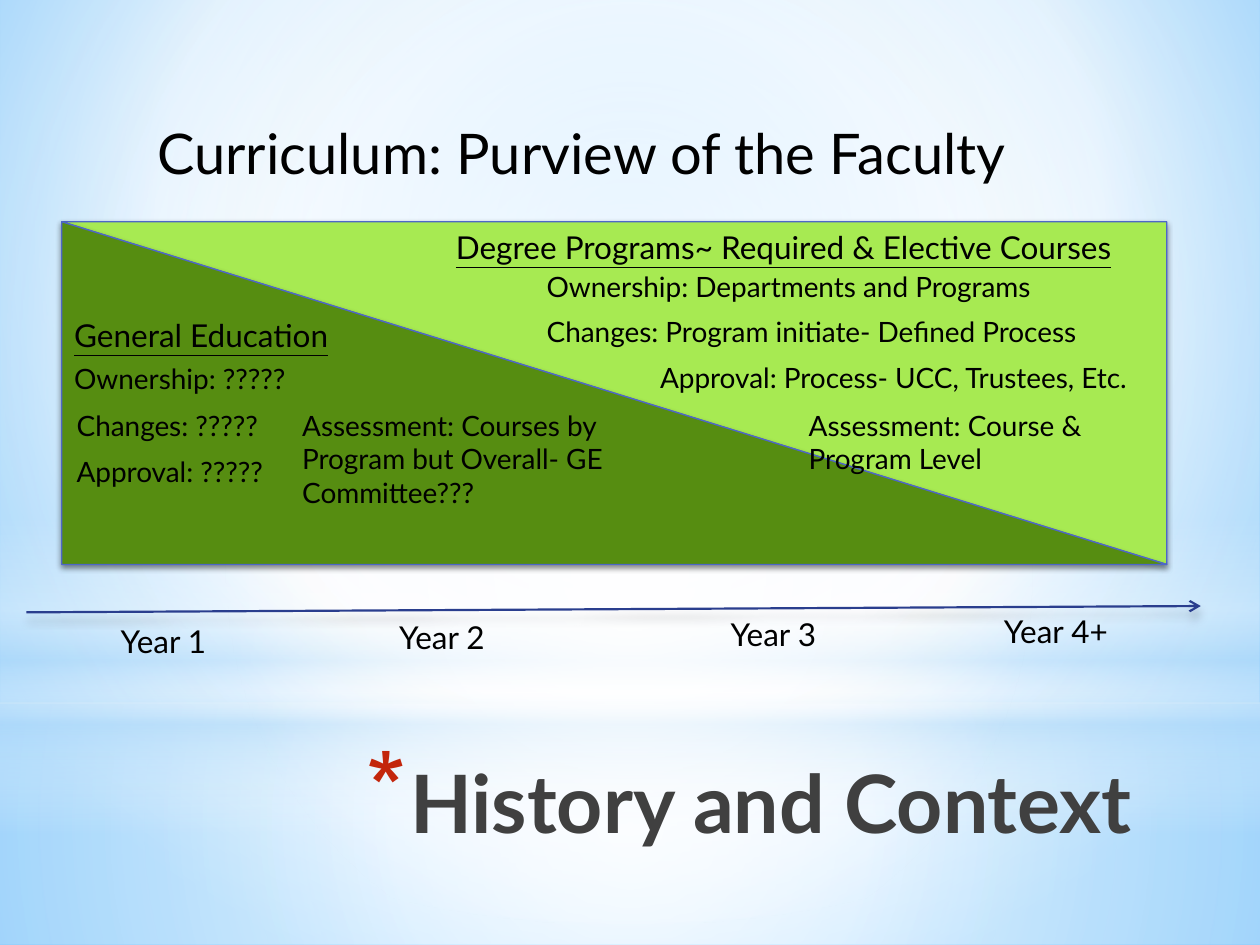
"""Build the History and Context slide on who owns the curriculum."""
from lxml import etree
from pptx import Presentation
from pptx.dml.color import RGBColor
from pptx.enum.shapes import MSO_CONNECTOR, MSO_SHAPE
from pptx.enum.text import PP_ALIGN
from pptx.oxml.ns import qn
from pptx.util import Inches, Pt

RECT, OVAL, WEDGE = MSO_SHAPE.RECTANGLE, MSO_SHAPE.OVAL, MSO_SHAPE.RIGHT_TRIANGLE
STRAIGHT, RIGHT = MSO_CONNECTOR.STRAIGHT, PP_ALIGN.RIGHT

BLACK = RGBColor(0x00, 0x00, 0x00)
GREY = RGBColor(0x40, 0x40, 0x40)
RED = RGBColor(0xC3, 0x26, 0x0C)
LIME = RGBColor(0xA7, 0xEA, 0x52)
GREEN = RGBColor(0x56, 0x8D, 0x11)
BLUE = RGBColor(0x4E, 0x67, 0xC8)
NAVY = RGBColor(0x2A, 0x3E, 0x8E)
WHITE = RGBColor(0xFF, 0xFF, 0xFF)
PALE = RGBColor(0xB4, 0xDC, 0xFA)
SKY = RGBColor(0x9E, 0xD5, 0xFF)
DEEP = RGBColor(0x5B, 0xB9, 0xFF)

FACE = "Lato"
MID = (50, 50, 50, 50)
BACK = [(0, SKY, 100), (60, WHITE, 100), (100, DEEP, 100)]
GLOWS = [
    (RECT, (0, 5.58, 10, 1.92), MID,
     [(0, WHITE, 91), (37, WHITE, 76), (100, PALE, 79)]),
    (RECT, (0, 0, 10, 5.58), MID,
     [(0, WHITE, 89), (48, WHITE, 62), (100, PALE, 79)]),
    (RECT, (0, 4.12, 10, 2.5), None,
     [(0, WHITE, 0), (29, WHITE, 30), (45, PALE, 40),
      (55, WHITE, 26), (65, PALE, 60), (100, WHITE, 0)]),
    (OVAL, (0, 1.75, 10, 5.58), MID, [(0, WHITE, 100), (56, WHITE, 0)]),
]
BAND = (0.49, 1.76, 8.77, 2.72)
HALVES = [(LIME, 180), (GREEN, 0)]
TITLE = ("History and Context", (2.3, 5.93, 6.78, 1.05))
TOPIC = ("Curriculum: Purview of the Faculty", (1.15, 0.89, 7.3, 0.64))
HEADS = [
    ("General Education", (0.49, 2.46, 2.31, 0.4)),
    ("Degree Programs~ Required & Elective Courses", (3.52, 1.76, 5.46, 0.4)),
]
NOTES = [
    ("Ownership: Departments and Programs", (4.24, 2.09, 4.15, 0.37)),
    ("Ownership: ?????", (0.49, 2.82, 1.99, 0.37)),
    ("Changes: Program initiate- Defined Process", (4.24, 2.45, 5.02, 0.37)),
    ("Changes: ?????", (0.51, 3.19, 1.72, 0.37)),
    ("Approval: Process- UCC, Trustees, Etc.", (5.14, 2.81, 4.12, 0.37)),
    ("Approval: ?????", (0.51, 3.56, 1.72, 0.37)),
    ("Assessment: Course & Program Level", (6.32, 3.19, 2.94, 0.64)),
    ("Assessment: Courses by Program but Overall- GE Committee???",
     (2.3, 3.19, 2.66, 0.91)),
]
AXIS = (0.21, 4.86, 9.53, 4.81)
YEARS = [
    ("Year 1", (0.86, 4.89, 0.9, 0.4)),
    ("Year 2", (3.07, 4.86, 0.9, 0.4)),
    ("Year 3", (5.7, 4.83, 0.9, 0.4)),
    ("Year 4+", (7.87, 4.81, 1.03, 0.4)),
]


def inches(box):
    return [Inches(n) for n in box]


def node(parent, tag, **attrs):
    item = etree.SubElement(parent, qn(tag))
    for key, val in attrs.items():
        item.set(key, str(val))
    return item


def blend(fill, owner, stops, focus):
    fill.solid()
    old = next(owner.iter(qn("a:solidFill")))
    grad = etree.Element(qn("a:gradFill"), rotWithShape="1")
    row = node(grad, "a:gsLst")
    for pos, color, alpha in stops:
        stop = node(row, "a:gs", pos=pos * 1000)
        tint = node(stop, "a:srgbClr", val=color)
        node(tint, "a:alpha", val=alpha * 1000)
    if focus:
        sides = {key: n * 1000 for key, n in zip("ltrb", focus)}
        node(node(grad, "a:path", path="circle"), "a:fillToRect", **sides)
    else:
        node(grad, "a:lin", ang=90 * 60000, scaled=0)
    old.getparent().replace(old, grad)


def shade(shape, alpha, blur, dist):
    list_ = node(shape._element.spPr, "a:effectLst")
    drop = node(list_, "a:outerShdw", blurRad=Pt(blur), dist=Pt(dist),
                dir=90 * 60000, rotWithShape=0)
    node(node(drop, "a:srgbClr", val=BLACK), "a:alpha", val=alpha * 1000)


def write(slide, text, box, size, color=BLACK, wrap=True):
    frame = slide.shapes.add_textbox(*inches(box)).text_frame
    frame.word_wrap = wrap
    para = frame.paragraphs[0]
    para.text = text
    font = para.font
    font.name, font.size = FACE, Pt(size)
    font.color.rgb = color
    return para


def star(para):
    props = para._p.get_or_add_pPr()
    props.set("marL", str(Inches(0.35)))
    props.set("indent", str(Inches(-0.35)))
    tint = node(props, "a:buClr")
    node(tint, "a:srgbClr", val=RED)
    marks = [tint, node(props, "a:buSzPct", val=128000),
             node(props, "a:buChar", char="*")]
    for spot, mark in enumerate(marks):
        props.insert(spot, mark)


def main():
    deck = Presentation()
    deck.slide_width, deck.slide_height = inches((10, 7.5))
    slide = deck.slides.add_slide(deck.slide_layouts[6])
    blend(slide.background.fill, slide._element, BACK, (20, 10, 20, 60))

    for kind, box, focus, stops in GLOWS:
        glow = slide.shapes.add_shape(kind, *inches(box))
        blend(glow.fill, glow._element, stops, focus)
        glow.line.fill.background()
        glow.shadow.inherit = False

    for color, turn in HALVES:
        half = slide.shapes.add_shape(WEDGE, *inches(BAND))
        half.rotation = turn
        half.fill.solid()
        half.fill.fore_color.rgb = color
        half.line.color.rgb = BLUE
        half.line.width = Pt(0.75)
        shade(half, 45, 3.1, 1.8)

    title = write(slide, *TITLE, 46, GREY)
    title.font.bold = True
    title.alignment = RIGHT
    star(title)
    write(slide, *TOPIC, 32)
    for text, box in HEADS:
        write(slide, text, box, 18).font.underline = True
    for text, box in NOTES:
        write(slide, text, box, 16)

    axis = slide.shapes.add_connector(STRAIGHT, *inches(AXIS))
    axis.line.color.rgb = NAVY
    axis.line.width = Pt(1.25)
    node(axis.line._get_or_add_ln(), "a:tailEnd", type="arrow")
    shade(axis, 20, 5, 4)
    for text, box in YEARS:
        write(slide, text, box, 18, wrap=False)

    deck.save("out.pptx")


if __name__ == "__main__":
    main()
